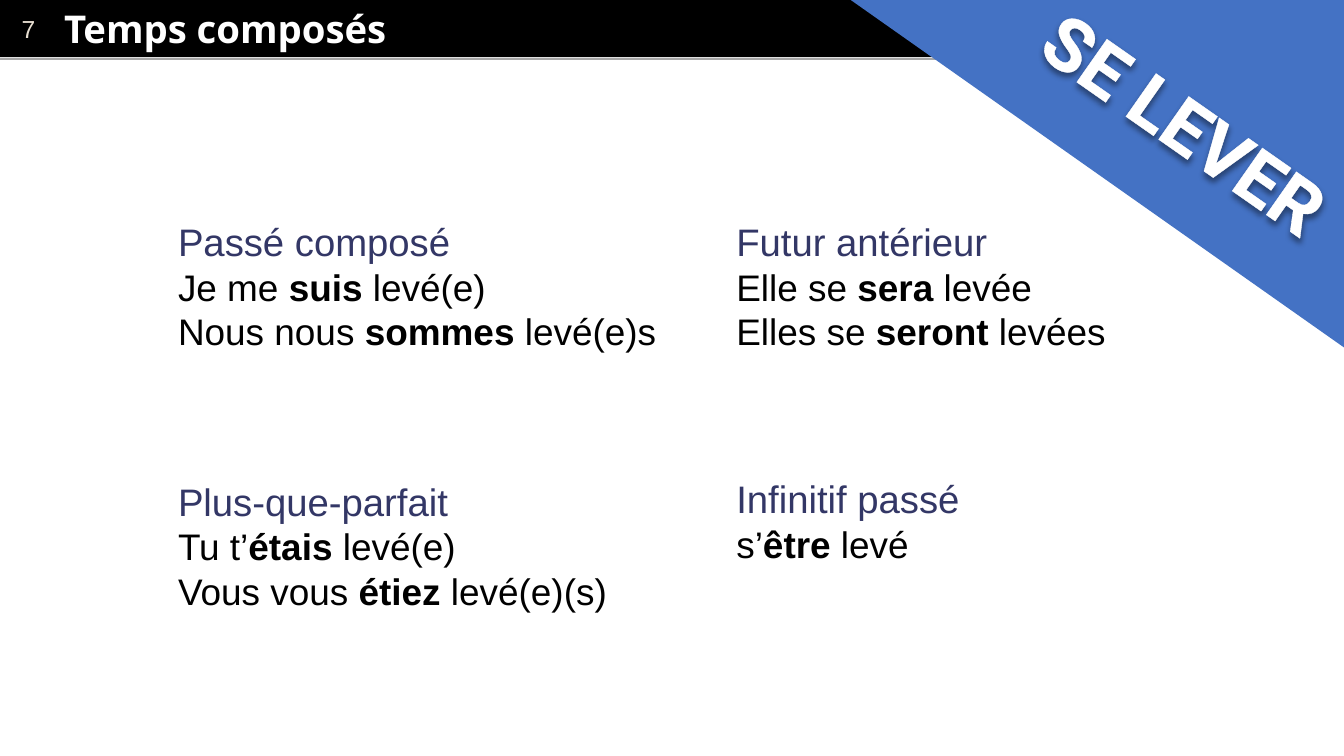
from lxml import etree
from pptx import Presentation
from pptx.dml.color import RGBColor
from pptx.enum.shapes import MSO_CONNECTOR, MSO_SHAPE
from pptx.enum.text import MSO_ANCHOR, MSO_AUTO_SIZE, PP_ALIGN
from pptx.oxml.ns import qn
from pptx.util import Inches, Pt

RECT, LINE = MSO_SHAPE.RECTANGLE, MSO_CONNECTOR.STRAIGHT
MID, FIXED = MSO_ANCHOR.MIDDLE, MSO_AUTO_SIZE.NONE
LEFT, CENTER = PP_ALIGN.LEFT, PP_ALIGN.CENTER

# Content: bold words stand between asterisks
TITLE, PAGE, VERB = "Temps composés", "7", "SE LEVER"
# column, top, spare lines kept below the text, heading, examples
TENSES = [
    (0, 2.33, 1, "Passé composé",
     ["Je me *suis* levé(e)", "Nous nous *sommes* levé(e)s"]),
    (0, 4.75, 0, "Plus-que-parfait",
     ["Tu t’*étais* levé(e)", "Vous vous *étiez* levé(e)(s)"]),
    (1, 2.33, 1, "Futur antérieur",
     ["Elle se *sera* levée", "Elles se *seront* levées"]),
    (1, 4.5, 0, "Infinitif passé", ["s’*être* levé"]),
]

# Grid and formats
WIDE, HIGH = 13.65, 7.68
COLS = [(1.71, 5.17), (7.38, 3.92)]  # left, width
BOX_H, ROW_H, PAD = 1.58, 0.43, 0.05
HEX = {"black": "000000", "white": "FFFFFF", "page": "E7DED1",
       "rule": "A6A6A6", "head": "333766", "blue": "4472C4"}
FONTS = {
    "title": {"name": "Open Sans", "size": Pt(28), "bold": True},
    "page": {"name": "Arial", "size": Pt(18)},
    "head": {"name": "Arial", "size": Pt(28)},
    "body": {"name": "Arial", "size": Pt(27)},
    "verb": {"name": "Roboto", "size": Pt(54), "bold": True},
}


def rgb(key):
    return RGBColor.from_string(HEX[key])


def add_run(para, text, kind, color, bold=None):
    run = para.add_run()
    run.text = text
    for key, val in FONTS[kind].items():
        setattr(run.font, key, val)
    run.font.color.rgb = rgb(color)
    if bold:
        run.font.bold = True
    return run


def set_frame(frame, **form):
    for key, val in form.items():
        setattr(frame, key, val)


def paint(shape, color):
    shape.shadow.inherit = False
    shape.fill.solid()
    shape.fill.fore_color.rgb = rgb(color)
    shape.line.fill.background()


def add_box(shapes, left, top, width, height, color):
    box = shapes.add_shape(RECT, *map(Inches, (left, top, width, height)))
    paint(box, color)
    box.text_frame.paragraphs[0].alignment = LEFT
    set_frame(box.text_frame, vertical_anchor=MID)
    return box


def add_head(slide):
    shapes = slide.shapes
    bar = add_box(shapes, 0, 0, WIDE, 0.58, "black")
    set_frame(bar.text_frame, margin_left=Inches(0.22))
    add_run(bar.text_frame.paragraphs[0], PAGE, "page", "page")

    rule = shapes.add_connector(LINE, 0, Inches(0.6), Inches(WIDE), Inches(0.6))
    rule.line.color.rgb = rgb("rule")
    rule.line.width = Pt(2)
    etree.SubElement(rule._element.spPr, qn("a:effectLst"))

    # The title lies over the bar
    title = shapes.title
    shapes._spTree.append(title._element)
    title.left, title.top = Inches(0.61), Inches(0.01)
    title.width, title.height = Inches(WIDE - 0.8), Inches(0.56)
    edge = Inches(0.04)
    set_frame(title.text_frame, vertical_anchor=MID, auto_size=FIXED,
              margin_left=edge, margin_right=edge,
              margin_top=edge, margin_bottom=edge)
    para = title.text_frame.paragraphs[0]
    para.alignment = LEFT
    add_run(para, TITLE, "title", "white")


def add_tense(shapes, col, top, spare, head, lines):
    left, width = COLS[col]
    box = add_box(shapes, left, top, width, BOX_H, "white")
    frame = box.text_frame
    set_frame(frame, word_wrap=False,
              margin_bottom=Inches(PAD + spare * ROW_H))
    add_run(frame.paragraphs[0], head, "head", "head")
    for line in lines:
        para = frame.add_paragraph()
        para.alignment = LEFT
        for spot, part in enumerate(line.split("*")):
            add_run(para, part, "body", "black", spot % 2 == 1)


def add_corner(shapes):
    # Blue triangle in the top right corner
    pen = shapes.build_freeform(Inches(8.64), 0)
    pen.add_line_segments([(Inches(WIDE), 0), (Inches(WIDE), Inches(3.53))])
    paint(pen.convert_to_shape(), "blue")

    # Verb along the slope
    verb = shapes.add_textbox(*map(Inches, (9.7, 0.99, 4.51, 0.74)))
    verb.rotation = 35
    set_frame(verb.text_frame, word_wrap=True)
    para = verb.text_frame.paragraphs[0]
    para.alignment, para.line_spacing = CENTER, Pt(45)
    run = add_run(para, VERB, "verb", "white")
    edge = etree.Element(qn("a:ln"), w=str(Pt(0.75)))
    fill = etree.SubElement(edge, qn("a:solidFill"))
    etree.SubElement(fill, qn("a:srgbClr"), val=HEX["white"])
    run.font._element.insert(0, edge)

    # Soft shadow under the letters
    glow = etree.SubElement(verb._element.spPr, qn("a:effectLst"))
    cast = etree.SubElement(glow, qn("a:outerShdw"), blurRad=str(Pt(4)),
                            dist=str(Pt(3)), dir="5400000", rotWithShape="0")
    tint = etree.SubElement(cast, qn("a:srgbClr"), val=HEX["black"])
    etree.SubElement(tint, qn("a:alpha"), val="40000")


def main():
    deck = Presentation()
    deck.slide_width, deck.slide_height = Inches(WIDE), Inches(HIGH)
    slide = deck.slides.add_slide(deck.slide_layouts[5])
    add_head(slide)
    for tense in TENSES:
        add_tense(slide.shapes, *tense)
    add_corner(slide.shapes)
    deck.save("out.pptx")


if __name__ == "__main__":
    main()
